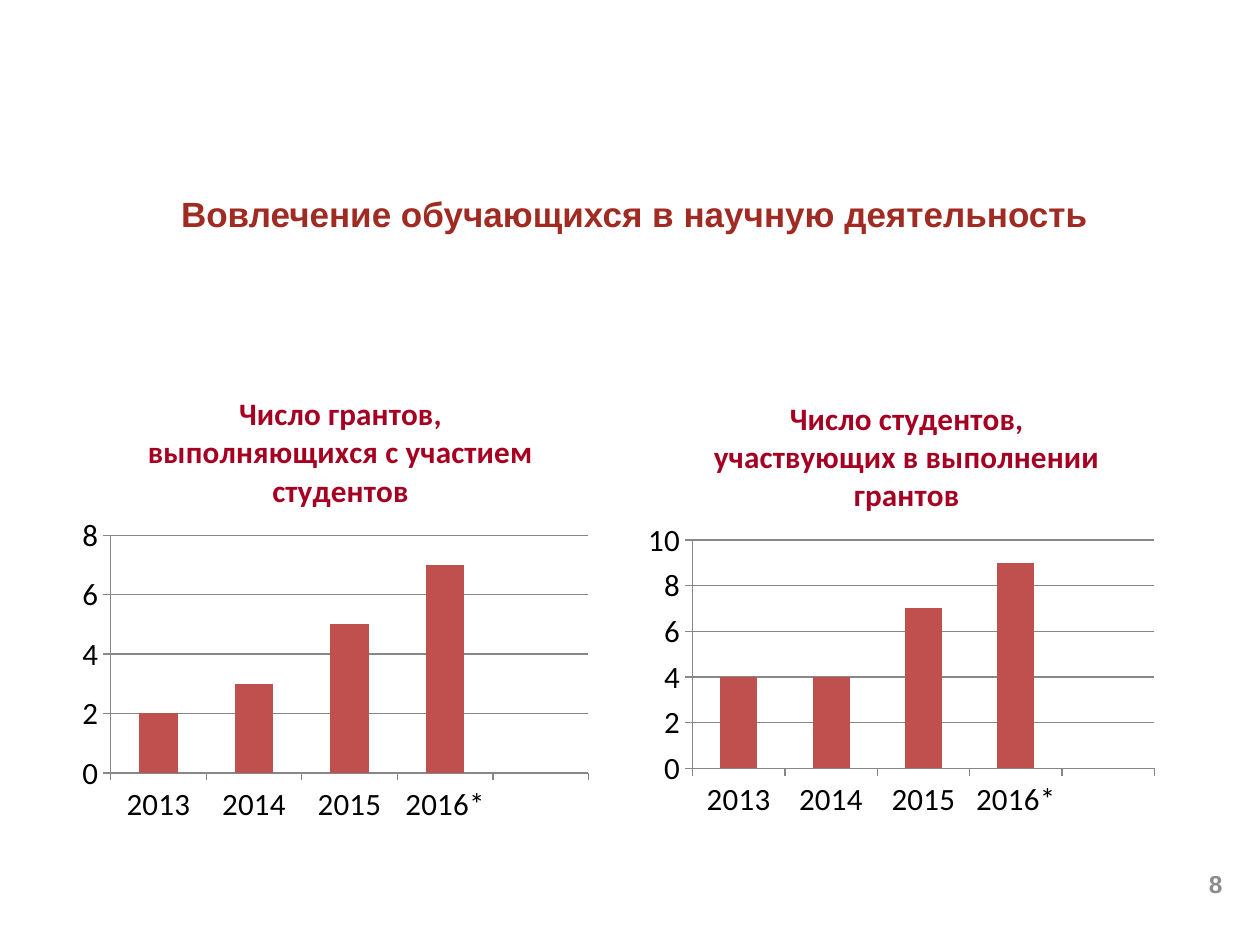
from lxml.etree import SubElement
from pptx import Presentation
from pptx.chart.data import CategoryChartData
from pptx.dml.color import RGBColor
from pptx.enum.chart import XL_CHART_TYPE as ChartType, XL_TICK_MARK as TickMark
from pptx.enum.text import MSO_ANCHOR as Anchor, MSO_AUTO_SIZE as AutoSize, PP_ALIGN as Align
from pptx.oxml.ns import qn
from pptx.util import Pt

EMU_PER_PX = 914400 / 126
YEARS = ["2013", "2014", "2015", "2016*", ""]
CHARTS = [
    (74, "Число грантов, выполняющихся с участием студентов", [2, 3, 5, 7, None],
     8, (0.13, 0.05), (0.07, 0.37, 0.91, 0.51)),
    (640, "Число студентов, участвующих в выполнении грантов", [4, 4, 7, 9, None],
     10, (0.13, 0.06), (0.1, 0.38, 0.88, 0.49)),
]


def px(length):
    """Turn a length in px into EMU."""
    return round(length * EMU_PER_PX)


def color(value):
    """Turn a hex string into a colour."""
    return RGBColor.from_string(value)


def style_font(font, name, size, tint, bold=False):
    """Set face, size, colour and weight."""
    font.name, font.size, font.bold = name, Pt(size), bold
    font.color.rgb = color(tint)


def write_text(box, frame, text, size, tint, align, anchor, spacing=1.0):
    """Place a box and write one bold line in it."""
    box.left, box.top, box.width, box.height = map(px, frame)
    body = box.text_frame
    body.word_wrap = True
    body.auto_size = AutoSize.NONE
    body.vertical_anchor = anchor
    para = body.paragraphs[0]
    para.alignment, para.line_spacing = align, spacing
    span = para.add_run()
    span.text = text
    style_font(span.font, "Arial", size, tint, True)


def set_layout(element, **values):
    """Give a chart title or plot area a manual layout."""
    layout = element.get_or_add_layout() if hasattr(element, "get_or_add_layout") else element.find(qn("c:layout"))
    if layout is None:
        layout = SubElement(element, qn("c:layout"))
        element.insert(0, layout)
    manual = SubElement(layout, qn("c:manualLayout"))
    for tag, value in values.items():
        SubElement(manual, qn(f"c:{tag}")).set("val", str(value))


def style_axis(axis):
    """Give an axis grey lines and outward ticks."""
    axis.format.line.color.rgb = color("878787")
    axis.major_tick_mark = TickMark.OUTSIDE
    axis.minor_tick_mark = TickMark.NONE
    style_font(axis.tick_labels.font, "Calibri", 17.7, "000000")


def add_column_chart(page, left, heading, values, maximum, title_at, plot_at):
    """Add one titled column chart by year."""
    data = CategoryChartData()
    data.categories = YEARS
    data.add_series("Series 1", values)
    chart = page.shapes.add_chart(
        ChartType.COLUMN_CLUSTERED, px(left), px(363), px(525), px(466), data).chart
    chart.has_legend = False
    style_font(chart.font, "Calibri", 17.7, "000000")
    chart.has_title = True
    title = chart.chart_title
    span = title.text_frame.paragraphs[0].add_run()
    span.text = heading
    style_font(span.font, "Calibri", 17.8, "A50021", True)
    title.include_in_layout = False
    x, y = title_at
    title_element = title.format.element if hasattr(title.format, "element") else chart.element.find(".//" + qn("c:title"))
    set_layout(title_element, xMode="edge", yMode="edge", x=x, y=y)
    x, y, width, height = plot_at
    set_layout(chart.element.find(".//" + qn("c:plotArea")), layoutTarget="inner",
               xMode="edge", yMode="edge", x=x, y=y, w=width, h=height)
    plot = chart.plots[0]
    plot.gap_width, plot.vary_by_categories = 150, False
    fill = plot.series[0].format.fill
    fill.solid()
    fill.fore_color.rgb = color("C0504D")
    style_axis(chart.category_axis)
    scale = chart.value_axis
    style_axis(scale)
    scale.minimum_scale, scale.maximum_scale, scale.major_unit = 0, maximum, 2
    scale.has_major_gridlines = True
    scale.major_gridlines.format.line.color.rgb = color("878787")


def main():
    """Build the slide and save it."""
    deck = Presentation()
    deck.slide_width, deck.slide_height = px(1260), px(945)
    page = deck.slides.add_slide(deck.slide_layouts[5])
    write_text(page.shapes.title, (84, 165, 1101, 100),
               "Вовлечение обучающихся в научную деятельность",
               20, "9F2B22", Align.CENTER, Anchor.TOP, 1.5)
    for chart in CHARTS:
        add_column_chart(page, *chart)
    number = page.shapes.add_textbox(0, 0, 0, 0)
    write_text(number, (941, 859, 294, 50), "8", 14, "8C8C8C", Align.RIGHT, Anchor.MIDDLE)
    deck.save("out.pptx")


if __name__ == "__main__":
    main()
